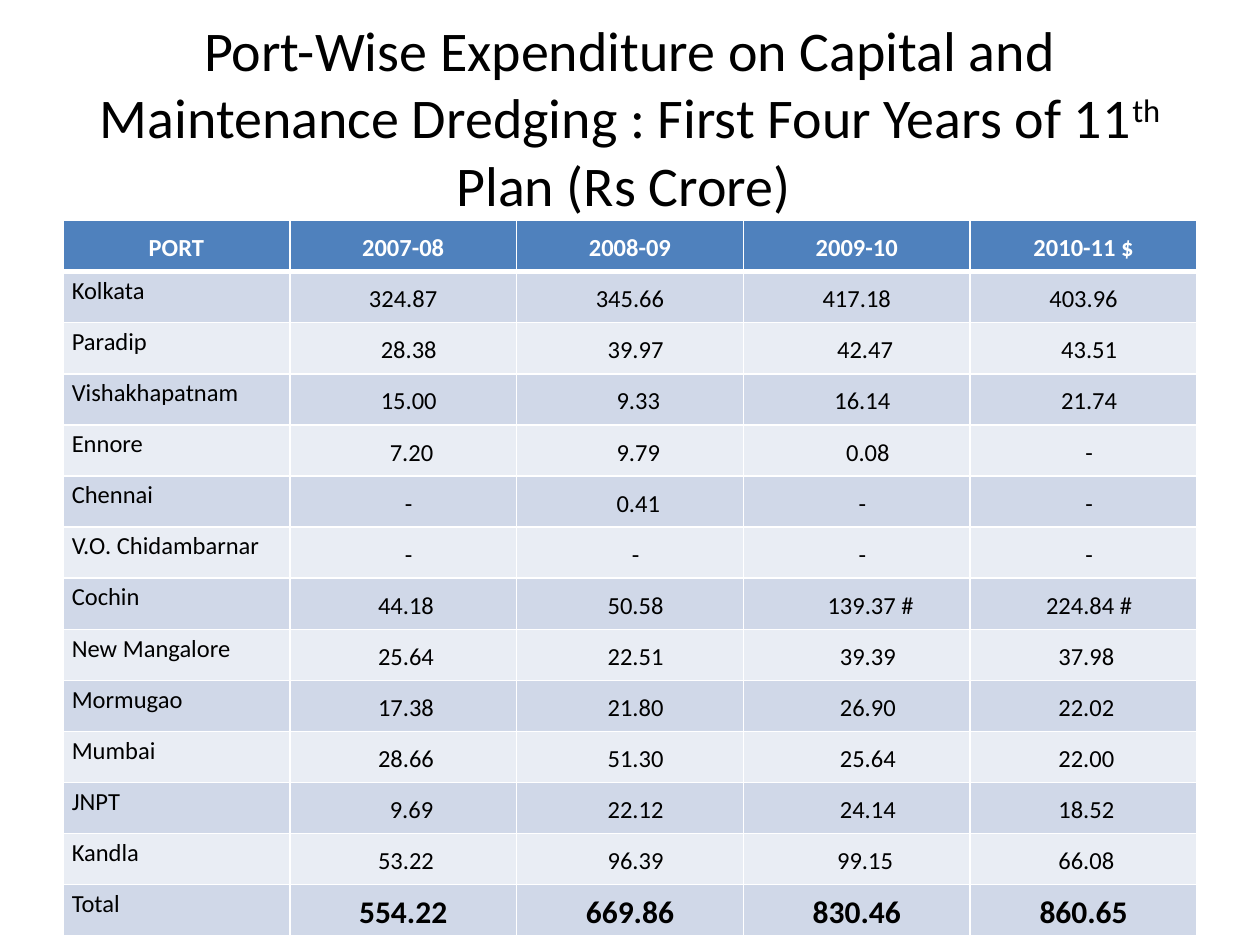
from lxml.etree import SubElement
from pptx import Presentation
from pptx.dml.color import RGBColor
from pptx.enum.text import MSO_ANCHOR as Anchor, PP_ALIGN as Align
from pptx.oxml.ns import qn
from pptx.util import Inches, Pt

FONT = "Calibri"
WHITE, BLACK, BLUE = "FFFFFF", "000000", "4F81BD"
BANDS = ["D0D8E8", "E9EDF4"]
INDENT_STEP = 0.044

HEADER = ["PORT", "2007-08", "2008-09", "2009-10", "2010-11 $"]
PORTS = [
    ("Kolkata", ["324.87", "345.66", "417.18", "403.96"], [0, 0, 0, 0]),
    ("Paradip", ["28.38", "39.97", "42.47", "43.51"], [2, 2, 3, 2]),
    ("Vishakhapatnam", ["15.00", "9.33", "16.14", "21.74"], [2, 3, 2, 2]),
    ("Ennore", ["7.20", "9.79", "0.08", "-"], [3, 3, 4, 2]),
    ("Chennai", ["-", "0.41", "-", "-"], [2, 3, 2, 2]),
    ("V.O. Chidambarnar", ["-", "-", "-", "-"], [2, 2, 2, 2]),
    ("Cochin", ["44.18", "50.58", "139.37 #", "224.84 #"], [1, 2, 5, 2]),
    ("New Mangalore", ["25.64", "22.51", "39.39", "37.98"], [1, 2, 4, 1]),
    ("Mormugao", ["17.38", "21.80", "26.90", "22.02"], [1, 2, 4, 1]),
    ("Mumbai", ["28.66", "51.30", "25.64", "22.00"], [1, 2, 4, 1]),
    ("JNPT", ["9.69", "22.12", "24.14", "18.52"], [3, 2, 4, 1]),
    ("Kandla", ["53.22", "96.39", "99.15", "66.08"], [1, 2, 3, 1]),
    ("Total", ["554.22", "669.86", "830.46", "860.65"], [0, 0, 0, 0]),
]


def color(value):
    """Turn a hex string into a colour."""
    return RGBColor.from_string(value)


def add_run(paragraph, text, size, ink=BLACK, bold=False):
    """Add one formatted run and return it."""
    run = paragraph.add_run()
    run.text = text
    run.font.name = FONT
    run.font.size = Pt(size)
    run.font.bold = bold
    run.font.color.rgb = color(ink)
    return run


def set_borders(cell, top, bottom):
    """Give a cell white borders, with top and bottom widths in points."""
    properties = cell._tc.get_or_add_tcPr()
    for side, width in (("L", 1), ("R", 1), ("T", top), ("B", bottom)):
        line = SubElement(properties, qn(f"a:ln{side}"), w=str(Pt(width)))
        SubElement(SubElement(line, qn("a:solidFill")), qn("a:srgbClr"), val=WHITE)


def fill_cell(cell, text, fill, align=Align.CENTER, anchor=Anchor.MIDDLE,
              indent=0, size=14, ink=BLACK, bold=False, top=1, bottom=1):
    """Write and format one table cell."""
    set_borders(cell, top, bottom)
    cell.fill.solid()
    cell.fill.fore_color.rgb = color(fill)
    cell.margin_left = cell.margin_right = Inches(0.07)
    cell.margin_top = cell.margin_bottom = 0
    cell.vertical_anchor = anchor
    paragraph = cell.text_frame.paragraphs[0]
    paragraph.alignment = align
    paragraph.line_spacing = 1.15
    if indent:
        paragraph._p.get_or_add_pPr().set("marL", str(Inches(indent * INDENT_STEP)))
    add_run(paragraph, text, size, ink, bold)


def add_title(slide, left, top, width, height):
    """Place the centred title in its box."""
    frame = slide.shapes.add_textbox(left, top, width, height).text_frame
    frame.word_wrap = True
    frame.vertical_anchor = Anchor.MIDDLE
    paragraph = frame.paragraphs[0]
    paragraph.alignment = Align.CENTER
    add_run(paragraph, "Port-Wise Expenditure on Capital and Maintenance Dredging"
                       " : First Four Years of 11", 32)
    ordinal = add_run(paragraph, "th", 32)
    ordinal._r.get_or_add_rPr().set("baseline", "30000")
    add_run(paragraph, " Plan (Rs Crore) ", 32)


def add_expenditure_table(slide, left, top, width, height):
    """Place the port expenditure table in its box."""
    row_count = len(PORTS) + 1
    table = slide.shapes.add_table(
        row_count, len(HEADER), left, top, width, height).table
    for row in table.rows:
        row.height = height // row_count
    for column, text in enumerate(HEADER):
        fill_cell(table.cell(0, column), text, BLUE, ink=WHITE, bold=True, bottom=3)
    for row, (port, values, indents) in enumerate(PORTS, 1):
        fill = BANDS[(row - 1) % 2]
        border = 3 if row == 1 else 1
        total = port == "Total"
        fill_cell(table.cell(row, 0), port, fill, Align.LEFT, Anchor.TOP, top=border)
        for column, (value, indent) in enumerate(zip(values, indents), 1):
            fill_cell(table.cell(row, column), value, fill, indent=indent,
                      size=18 if total else 14, bold=total, top=border)


def main():
    """Build and save the presentation."""
    presentation = Presentation()
    presentation.slide_width = Inches(10)
    presentation.slide_height = Inches(7.5)
    slide = presentation.slides.add_slide(presentation.slide_layouts[6])
    add_title(slide, Inches(0.5), Inches(0.3), Inches(9), Inches(1.25))
    add_expenditure_table(slide, Inches(0.5), Inches(1.75), Inches(9), Inches(5.68))
    presentation.save("out.pptx")


if __name__ == "__main__":
    main()
